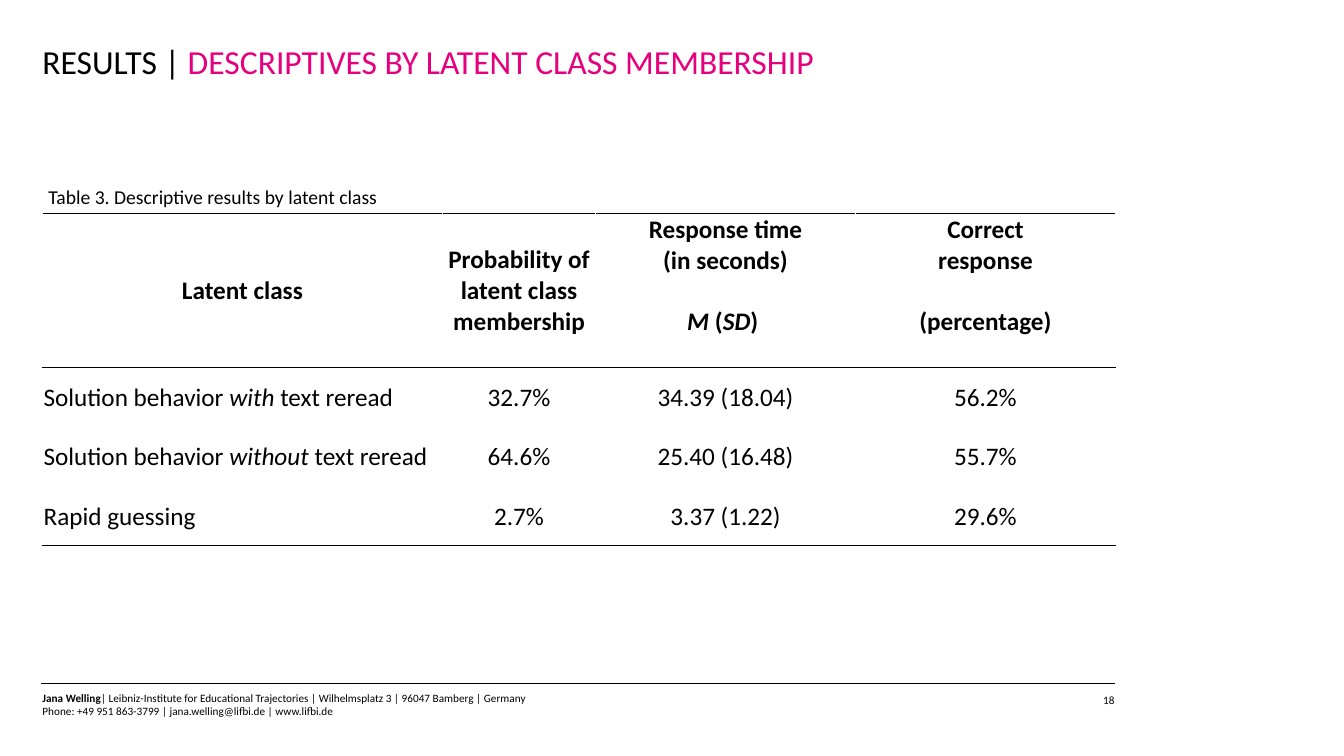
from lxml import etree
from pptx import Presentation
from pptx.dml.color import RGBColor
from pptx.enum.shapes import MSO_CONNECTOR
from pptx.enum.text import MSO_ANCHOR, PP_ALIGN
from pptx.oxml.ns import qn
from pptx.util import Cm, Pt

LEFT, CENTER, RIGHT = PP_ALIGN.LEFT, PP_ALIGN.CENTER, PP_ALIGN.RIGHT
MIDDLE = MSO_ANCHOR.MIDDLE
STRAIGHT = MSO_CONNECTOR.STRAIGHT
BLACK, WHITE, PINK = "000000", "FFFFFF", "E6007E"


def color(value):
    return RGBColor.from_string(value)


def add_run(paragraph, text, size, hue=BLACK, bold=False, italic=False):
    run = paragraph.add_run()
    run.text = text
    run.font.name = "Calibri"
    run.font.size = Pt(size)
    run.font.color.rgb = color(hue)
    run.font.bold = bold
    run.font.italic = italic


presentation = Presentation()
presentation.slide_width, presentation.slide_height = Cm(33.87), Cm(19.05)
slide = presentation.slides.add_slide(presentation.slide_layouts[6])

# Footer line
footer_line = slide.shapes.add_connector(STRAIGHT, Cm(1.04), Cm(17.22), Cm(28.09), Cm(17.22))
footer_line.line.color.rgb = color(BLACK)
footer_line.line.width = Pt(0.5)
etree.SubElement(footer_line._element.spPr, qn("a:effectLst"))

# Text boxes: position, insets, size, alignment, paragraphs of (text, colour, bold)
text_boxes = [
    ((26.49, 17.48, 1.6, 0.33), (0, 0), 8, RIGHT, [[("18", BLACK, False)]]),
    ((1.07, 17.42, 20.65, 0.69), (0, 0), 8, LEFT, [
        [("Jana Welling", BLACK, True),
         ("| Leibniz-Institute for Educational Trajectories | Wilhelmsplatz 3 | 96047 Bamberg | Germany",
          BLACK, False)],
        [("Phone: +49 951 863-3799 | jana.welling@lifbi.de | www.lifbi.de", BLACK, False)],
    ]),
    ((1.07, 1.04, 27.05, 2.11), (0, 0), 24, LEFT, [
        [("RESULTS | ", BLACK, False),
         ("DESCRIPTIVES BY LATENT CLASS MEMBERSHIP", PINK, False)],
    ]),
    ((0.97, 4.52, 16.99, 0.86), (0.25, 0.13), 14, LEFT, [
        [("Table 3. Descriptive results by latent class", BLACK, False)],
    ]),
]
for position, (inset_x, inset_y), size, alignment, paragraphs in text_boxes:
    frame = slide.shapes.add_textbox(*map(Cm, position)).text_frame
    frame.word_wrap = True
    frame.margin_left = frame.margin_right = Cm(inset_x)
    frame.margin_top = frame.margin_bottom = Cm(inset_y)
    for index, pieces in enumerate(paragraphs):
        paragraph = frame.add_paragraph() if index else frame.paragraphs[0]
        paragraph.alignment = alignment
        for text, hue, bold in pieces:
            add_run(paragraph, text, size, hue, bold)

# Table: asterisks enclose italic words
HEADER_ROWS = 2
RULED_EDGES = (0, 2, 5)
rows = [
    ["Latent class", "Probability of latent class membership",
     "Response time\n(in seconds)", "Correct\nresponse"],
    ["", "", "*M* (*SD*) ", "(percentage)"],
    ["Solution behavior *with *text reread", "32.7%", "34.39 (18.04)", "56.2%"],
    ["Solution behavior *without* text reread", "64.6%", "25.40 (16.48)", "55.7%"],
    ["Rapid guessing", "2.7%", "3.37 (1.22)", "29.6%"],
]
column_widths = [10.08, 3.86, 6.55, 6.55]
table = slide.shapes.add_table(
    len(rows), len(column_widths), Cm(1.07), Cm(5.38), Cm(sum(column_widths)), Cm(7.5)).table
table.first_row = table.horz_banding = False
for column, width in zip(table.columns, column_widths):
    column.width = Cm(width)
for row in table.rows:
    row.height = Cm(1.5)
for column_index in (0, 1):
    table.cell(0, column_index).merge(table.cell(1, column_index))

for row_index, row in enumerate(rows):
    for column_index, text in enumerate(row):
        cell = table.cell(row_index, column_index)
        cell.fill.solid()
        cell.fill.fore_color.rgb = color(WHITE)
        cell.vertical_anchor = MIDDLE
        cell.margin_left = cell.margin_right = cell.margin_top = Cm(0.03)
        cell.margin_bottom = Cm(0)

        # Cell text
        paragraph = cell.text_frame.paragraphs[0]
        is_header = row_index < HEADER_ROWS
        paragraph.alignment = CENTER if is_header or column_index else LEFT
        for line_index, line in enumerate(text.split("\n")):
            if line_index:
                paragraph.add_line_break()
            for part_index, part in enumerate(line.split("*")):
                if part:
                    add_run(paragraph, part, 18, bold=is_header, italic=part_index % 2 == 1)

        # Cell borders: black on ruled edges, white elsewhere
        bottom_edge = row_index + (cell.span_height if cell.is_merge_origin else 1)
        ruled = {"lnL": False, "lnR": False,
                 "lnT": row_index in RULED_EDGES, "lnB": bottom_edge in RULED_EDGES}
        properties = cell._tc.get_or_add_tcPr()
        for position, (side, black) in enumerate(ruled.items()):
            border = etree.Element(qn("a:" + side), w=str(Pt(0.5 if black else 1)))
            fill = etree.SubElement(border, qn("a:solidFill"))
            etree.SubElement(fill, qn("a:srgbClr"), val=BLACK if black else WHITE)
            properties.insert(position, border)

presentation.save("out.pptx")
